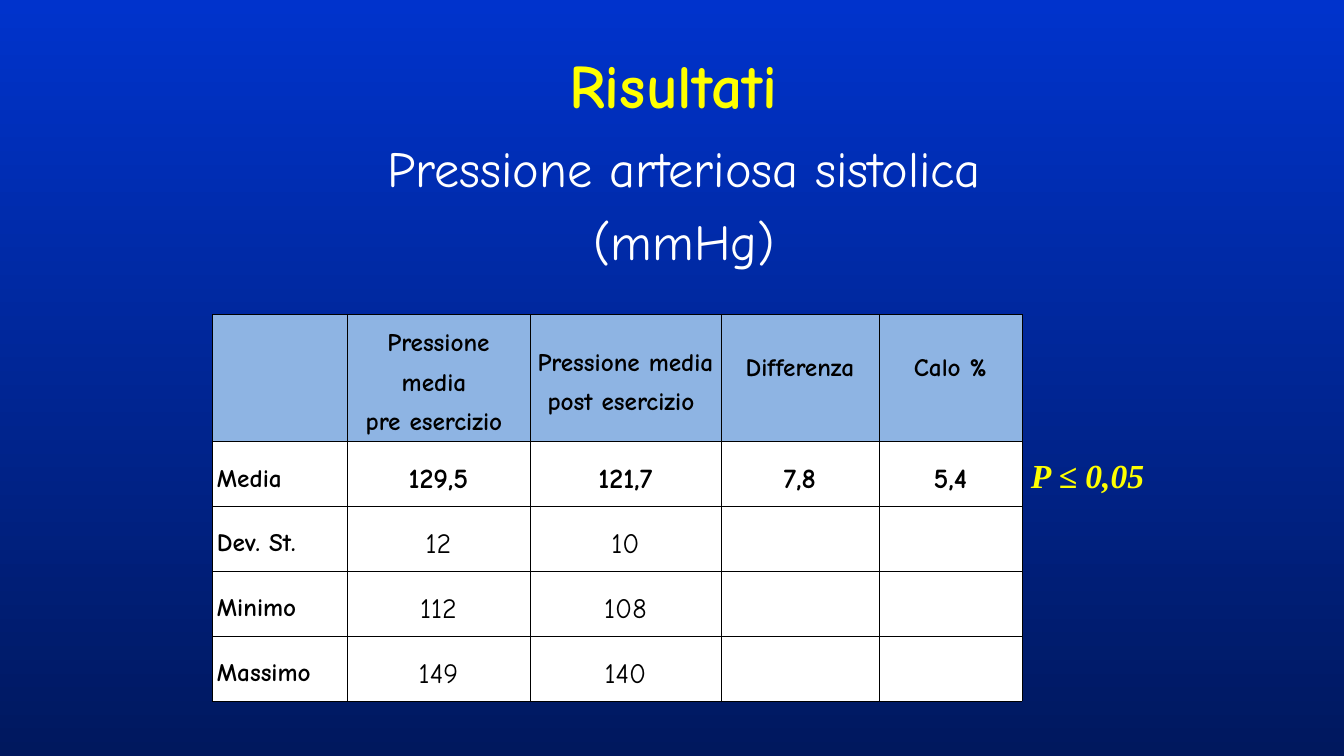
from pptx import Presentation
from pptx.dml.color import RGBColor
from pptx.enum.text import MSO_ANCHOR as Anchor, MSO_AUTO_SIZE as AutoSize, PP_ALIGN as Align
from pptx.oxml import parse_xml
from pptx.oxml.ns import nsdecls
from pptx.util import Emu, Pt

PX = 914400 / 100.8
COLORS = {"top": "0033CC", "bottom": "00185E", "yellow": "FFFF00", "white": "FFFFFF",
          "black": "000000", "header": "8EB4E3"}


def px(*lengths):
    return [Emu(round(n * PX)) for n in lengths]


def write(frame, text, size, color, font="Comic Neue", bold=False, italic=False,
          align=Align.CENTER, spacing=None, before=0):
    for i, line in enumerate(text.split("\n")):
        paragraph = frame.paragraphs[0] if i == 0 else frame.add_paragraph()
        paragraph.alignment = align
        paragraph.line_spacing = spacing
        paragraph.space_before = Pt(before)
        run = paragraph.add_run()
        run.text = line
        run.font.name = font
        run.font.size = Pt(size)
        run.font.bold = bold
        run.font.italic = italic
        run.font.color.rgb = RGBColor.from_string(COLORS[color])


deck = Presentation()
deck.slide_width, deck.slide_height = px(1344, 756)
slide = deck.slides.add_slide(deck.slide_layouts[5])

# Background
backdrop = slide.background.fill
backdrop.gradient()
backdrop.gradient_angle = 270
for stop, name in zip(backdrop.gradient_stops, ("top", "bottom")):
    stop.color.rgb = RGBColor.from_string(COLORS[name])

# Title
title = slide.shapes.title
title.left, title.top, title.width, title.height = px(220, 21, 907, 126)
title.text_frame.vertical_anchor = Anchor.MIDDLE
title.text_frame.auto_size = AutoSize.NONE
write(title.text_frame, "Risultati", 44, "yellow", bold=True)

# Subtitle
subtitle = slide.shapes.add_textbox(*px(339, 132, 690, 56)).text_frame
subtitle.word_wrap = True
subtitle.margin_left, subtitle.margin_right = px(5, 5)
write(subtitle, "Pressione arteriosa sistolica\n(mmHg)", 36, "white", before=9)

# Table of results
ROWS = [
    ["", "Pressione media \npre esercizio ", "Pressione media \npost esercizio ", "Differenza", "Calo %"],
    ["Media", "129,5", "121,7", "7,8", "5,4"],
    ["Dev. St.", "12", "10", "", ""],
    ["Minimo", "112", "108", "", ""],
    ["Massimo", "149", "140", "", ""],
]
WIDTHS = [135, 183, 191, 158, 143]
HEIGHTS = [127, 65, 65, 65, 65]
results = slide.shapes.add_table(len(ROWS), len(WIDTHS),
                                 *px(212, 314, sum(WIDTHS), sum(HEIGHTS))).table
for column, width in zip(results.columns, px(*WIDTHS)):
    column.width = width
for row, height in zip(results.rows, px(*HEIGHTS)):
    row.height = height

for r, texts in enumerate(ROWS):
    for c, text in enumerate(texts):
        cell = results.cell(r, c)
        unit_header = r == 0 and c > 2
        cell.vertical_anchor = Anchor.TOP if unit_header else Anchor.MIDDLE
        cell.margin_left, cell.margin_right, cell.margin_top, cell.margin_bottom = px(
            5, 5, 29 if unit_header else 0, 0)
        if text:
            write(cell.text_frame, text, 18 if r == 0 or c == 0 else 20, "black",
                  bold=r < 2 or c == 0, spacing=1.37,
                  align=Align.LEFT if c == 0 else Align.CENTER)
        # Borders come before the fill in the cell properties
        for side in ("L", "R", "T", "B"):
            under_header = (r, side) in ((0, "B"), (1, "T"))
            cell._tc.get_or_add_tcPr().append(parse_xml(
                f'<a:ln{side} {nsdecls("a")} w="{Pt(0.75 if under_header else 0.23)}"><a:solidFill>'
                f'<a:srgbClr val="{COLORS["black"]}"/></a:solidFill></a:ln{side}>'))
        cell.fill.solid()
        cell.fill.fore_color.rgb = RGBColor.from_string(COLORS["white" if r else "header"])

# Significance
significance = slide.shapes.add_textbox(*px(1021, 450, 151, 50)).text_frame
significance.word_wrap = True
significance.auto_size = AutoSize.SHAPE_TO_FIT_TEXT
write(significance, "P ≤ 0,05", 24, "yellow", font="Times New Roman", bold=True,
      italic=True, align=Align.LEFT)

deck.save("out.pptx")
